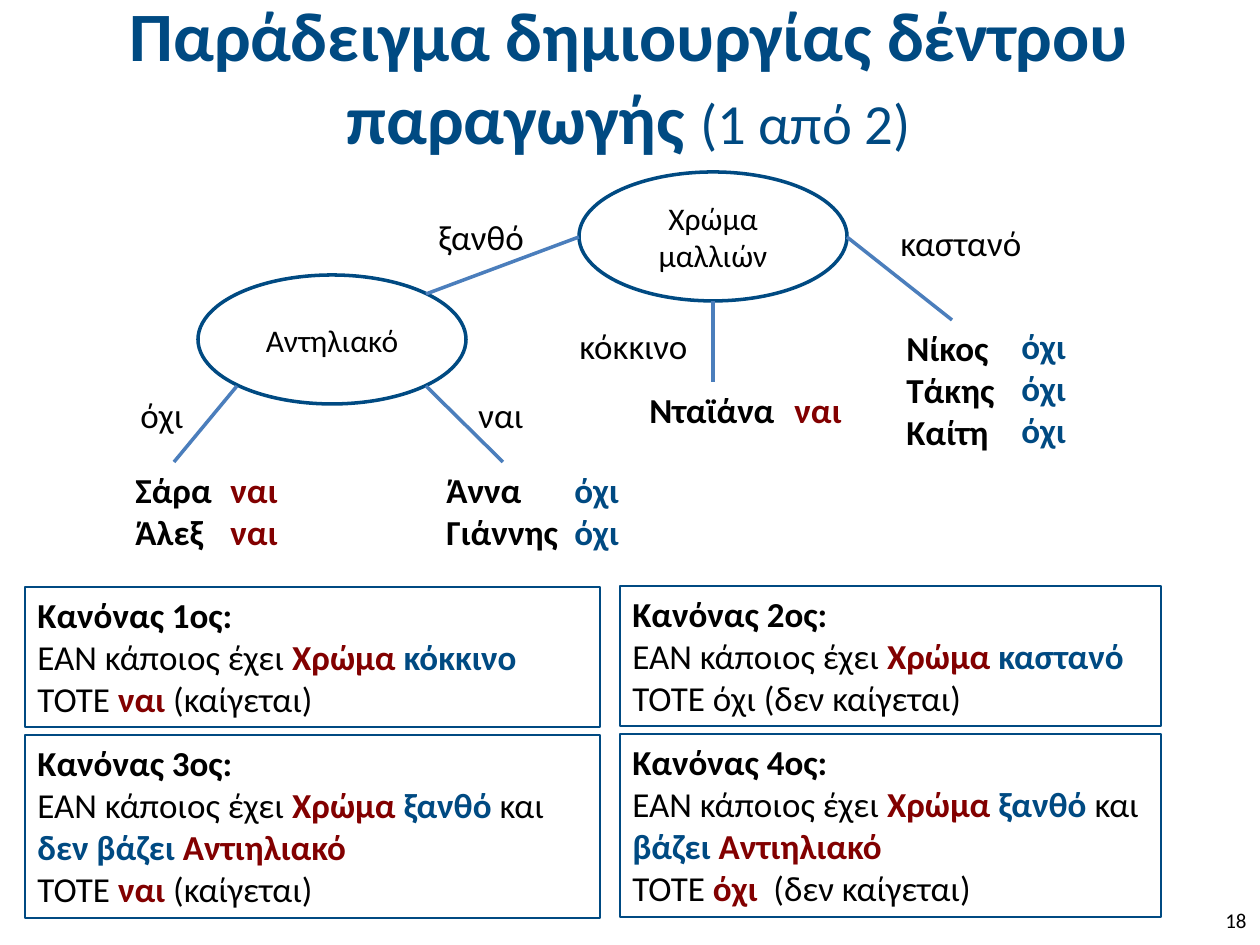
from lxml import etree
from pptx import Presentation
from pptx import util as u
from pptx.dml import color
from pptx.enum import shapes, text
from pptx.oxml import ns

PX = 914400 / 126
BLUE, RED, BLACK, WHITE, EDGE = "004A82", "820000", "000000", "FFFFFF", "4B7EBC"
LEFT, CENTER, RIGHT = text.PP_ALIGN.LEFT, text.PP_ALIGN.CENTER, text.PP_ALIGN.RIGHT
TOP, MIDDLE = text.MSO_ANCHOR.TOP, text.MSO_ANCHOR.MIDDLE

# Span styles used in the rules
PLAIN = dict(color=BLACK, bold=False)
STRONG = dict(color=BLACK, bold=True)
ATTRIBUTE = dict(color=RED, bold=True)
VALUE = dict(color=BLUE, bold=True)


def px(*lengths):
    return [u.Emu(round(length * PX)) for length in lengths]


def rgb(code):
    return color.RGBColor.from_string(code)


def add_span(para, words, size=20, color=BLACK, bold=False):
    span = para.add_run()
    span.text = words
    span.font.name = "Calibri"
    span.font.size = u.Pt(size)
    span.font.bold = bold
    span.font.color.rgb = rgb(color)


def write(box, paragraphs, align=LEFT, anchor=TOP, wrap=True, grow=False):
    """Fill a box; each paragraph is a list of (words, format) spans."""
    frame = box.text_frame
    frame.word_wrap = wrap
    frame.vertical_anchor = anchor
    fit = text.MSO_AUTO_SIZE
    frame.auto_size = fit.SHAPE_TO_FIT_TEXT if grow else fit.NONE
    for index, spans in enumerate(paragraphs):
        para = frame.add_paragraph() if index else frame.paragraphs[0]
        para.alignment = align
        for words, style in spans:
            add_span(para, words, **style)


def add_text(page, place, paragraphs, **layout):
    write(page.shapes.add_textbox(*px(*place)), paragraphs, **layout)


def add_label(page, place, words, **style):
    """Unwrapped label, one paragraph for each word."""
    lines = [[(word, style)] for word in words.split()]
    add_text(page, place, lines, wrap=False, grow=True)


def add_outlined(page, kind, place, width, fill=None):
    shape = page.shapes.add_shape(kind, *px(*place))
    shape.shadow.inherit = False
    if fill:
        shape.fill.solid()
        shape.fill.fore_color.rgb = rgb(fill)
    else:
        shape.fill.background()
    shape.line.color.rgb = rgb(BLUE)
    shape.line.width = u.Pt(width)
    return shape


def add_node(page, left, top, words):
    node = add_outlined(page, shapes.MSO_SHAPE.OVAL, (left, top, 268, 129), 2, WHITE)
    write(node, [[(words, dict(size=18))]], align=CENTER, anchor=MIDDLE)


def add_rule(page, place, paragraphs):
    rule = add_outlined(page, shapes.MSO_SHAPE.RECTANGLE, place, 1)
    write(rule, paragraphs, grow=True)


def add_edge(page, *ends):
    edge = page.shapes.add_connector(shapes.MSO_CONNECTOR.STRAIGHT, *px(*ends))
    edge.line.color.rgb = rgb(EDGE)
    edge.line.width = u.Pt(2)
    etree.SubElement(edge._element.spPr, ns.qn("a:effectLst"))


def add_rules(page):
    start = ("ΕΑΝ κάποιος έχει ", PLAIN)
    hair = ("Χρώμα ", ATTRIBUTE)
    blond = [start, hair, ("ξανθό ", VALUE), ("και ", PLAIN)]
    lotion = ("Αντιηλιακό", ATTRIBUTE)
    then = ("ΤΟΤΕ ", PLAIN)
    burns = [then, ("ναι", ATTRIBUTE), (" (καίγεται)", PLAIN)]
    rules = [
        ((25, 587, 575, 140), [[start, hair, ("κόκκινο", VALUE)], burns]),
        ((620, 586, 541, 140), [[start, hair, ("καστανό", VALUE)],
                                [("ΤΟΤΕ όχι (δεν καίγεται)", PLAIN)]]),
        ((25, 735, 575, 183), [blond + [("δεν βάζει ", VALUE), lotion], burns]),
        ((620, 734, 541, 183), [blond + [("βάζει ", VALUE), lotion],
                                [then, ("όχι ", ATTRIBUTE), (" (δεν καίγεται)", PLAIN)]]),
    ]
    for number, (place, body) in enumerate(rules, 1):
        add_rule(page, place, [[(f"Κανόνας {number}ος:", STRONG)]] + body)


def add_tree(page):
    add_node(page, 579, 172, "Χρώμα μαλλιών")
    add_node(page, 198, 275, "Αντηλιακό")

    # Branches
    for ends in [(579, 237, 426, 294), (713, 301, 713, 382), (847, 237, 952, 320),
                 (237, 386, 174, 462), (426, 386, 503, 462)]:
        add_edge(page, *ends)

    # Branch values
    for place, words in [((426, 209, 112, 55), "ξανθό"), ((567, 318, 140, 55), "κόκκινο"),
                         ((888, 215, 147, 55), "καστανό"), ((128, 387, 69, 55), "όχι"),
                         ((466, 387, 71, 55), "ναι")]:
        add_label(page, place, words)

    # Leaves: people and their outcomes
    for place, words, shade in [
        ((123, 462, 103, 97), "Σάρα Άλεξ", BLACK),
        ((218, 462, 73, 97), "ναι ναι", RED),
        ((434, 462, 139, 97), "Άννα Γιάννης", BLACK),
        ((562, 462, 71, 97), "όχι όχι", BLUE),
        ((637, 382, 152, 55), "Νταϊάνα", BLACK),
        ((782, 382, 73, 55), "ναι", RED),
        ((894, 320, 115, 140), "Νίκος Τάκης Καίτη", BLACK),
        ((1009, 318, 71, 140), "όχι όχι όχι", BLUE),
    ]:
        add_label(page, place, words, color=shade, bold=True)


def main():
    deck = Presentation()
    deck.slide_width, deck.slide_height = px(1260, 945)
    page = deck.slides.add_slide(deck.slide_layouts[6])

    # Title and slide number
    add_text(page, (-1, 0, 1260, 150),
             [[("Παράδειγμα δημιουργίας δέντρου παραγωγής ",
                dict(size=39.6, color=BLUE, bold=True)),
               ("(1 από 2)", dict(size=32.4, color=BLUE))]],
             align=CENTER, anchor=MIDDLE)
    add_text(page, (965, 895, 294, 50), [[("18", dict(size=12))]],
             align=RIGHT, anchor=MIDDLE)

    add_rules(page)
    add_tree(page)
    deck.save("out.pptx")


if __name__ == "__main__":
    main()
